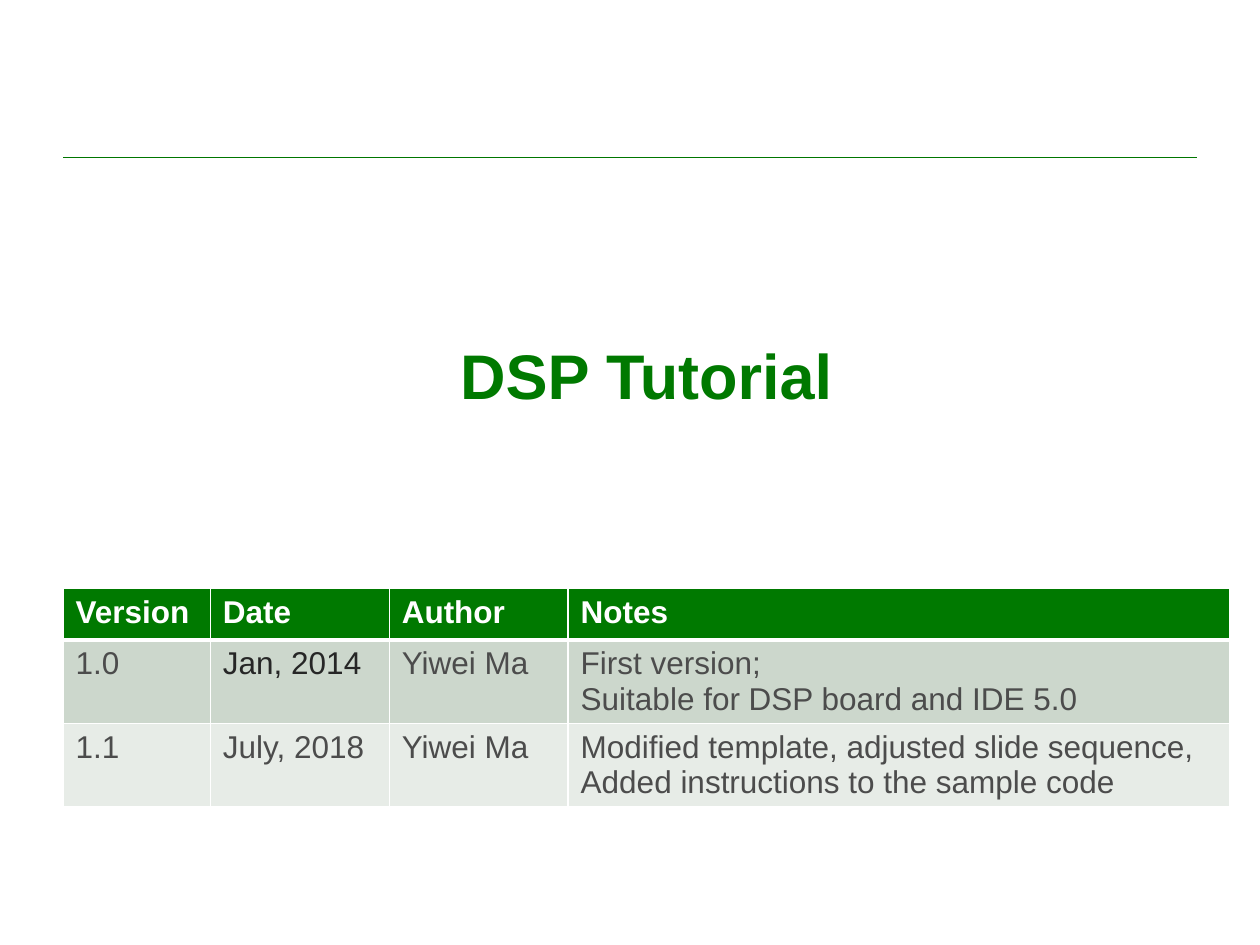
from typing import NamedTuple

from lxml.etree import SubElement
from pptx import Presentation
from pptx.dml.color import RGBColor
from pptx.enum.shapes import MSO_CONNECTOR as Link
from pptx.enum.text import MSO_ANCHOR as Anchor, PP_ALIGN as Align
from pptx.oxml.ns import qn
from pptx.util import Inches, Pt

GREEN, WHITE, GREY, DARK = "007900", "FFFFFF", "4C4C4C", "262626"
BANDS = ["CCD7CC", "E7ECE7"]
WIDTHS = [1.17, 1.42, 1.42, 5.25]
HEIGHT = 0.41


class Entry(NamedTuple):
    version: str
    date: str
    author: str
    notes: str


HEAD = Entry("Version", "Date", "Author", "Notes")
LOG = [
    Entry("1.0", "Jan, 2014", "Yiwei Ma",
          "First version;\vSuitable for DSP board and IDE 5.0"),
    Entry("1.1", "July, 2018", "Yiwei Ma",
          "Modified template, adjusted slide sequence,\n"
          "Added instructions to the sample code"),
]


def color(code: str) -> RGBColor:
    return RGBColor.from_string(code)


def style(frame, size: int, code: str, bold: bool) -> None:
    """Give every run in a text frame the same font."""
    form = {"name": "Arial", "size": Pt(size), "bold": bold}
    for para in frame.paragraphs:
        for run in para.runs:
            for key, value in form.items():
                setattr(run.font, key, value)
            run.font.color.rgb = color(code)


def edge(cell, base: float) -> None:
    """Draw white cell borders, with their own weight at the base."""
    props = cell._tc.get_or_add_tcPr()
    for place, (side, width) in enumerate(
            {"L": 1, "R": 1, "T": 1, "B": base}.items()):
        line = SubElement(props, qn(f"a:ln{side}"), w=str(Pt(width)))
        fill = SubElement(line, qn("a:solidFill"))
        SubElement(fill, qn("a:srgbClr"), val=WHITE)
        props.insert(place, line)  # borders come before the fill


def paint(cell, text: str, fill: str, ink: str, head: bool) -> None:
    cell.text_frame.text = text
    style(cell.text_frame, 18, ink, head)
    cell.fill.solid()
    cell.fill.fore_color.rgb = color(fill)
    edge(cell, 3 if head else 1)


def add_rule(slide) -> None:
    rule = slide.shapes.add_connector(
        Link.STRAIGHT, Inches(0.5), Inches(1.25), Inches(9.5), Inches(1.25))
    rule.line.color.rgb = color("007600")
    rule.line.width = Pt(0.75)
    SubElement(rule._element.spPr, qn("a:effectLst"))


def add_title(slide, text: str) -> None:
    title = slide.shapes.title
    box = {"left": 0.88, "top": 1.76, "width": 8.5, "height": 2.42}
    for key, value in box.items():
        setattr(title, key, Inches(value))
    frame = title.text_frame
    frame.text = text
    frame.vertical_anchor = Anchor.MIDDLE
    frame.paragraphs[0].alignment = Align.CENTER
    style(frame, 36, GREEN, True)


def add_log(slide) -> None:
    rows = [HEAD, *LOG]
    table = slide.shapes.add_table(
        len(rows), len(WIDTHS), Inches(0.5), Inches(4.67),
        Inches(sum(WIDTHS)), Inches(HEIGHT * len(rows))).table
    for col, width in zip(table.columns, WIDTHS):
        col.width = Inches(width)
    for r, entry in enumerate(rows):
        head = r == 0
        fill = GREEN if head else BANDS[(r - 1) % 2]
        for c, text in enumerate(entry):
            ink = WHITE if head else GREY
            if text == "Jan, 2014":
                ink = DARK
            paint(table.cell(r, c), text, fill, ink, head)


def main() -> None:
    deck = Presentation()
    deck.slide_width, deck.slide_height = Inches(10), Inches(7.5)
    slide = deck.slides.add_slide(deck.slide_layouts[0])
    # The subtitle is not used
    sub = slide.placeholders[1]._element
    sub.getparent().remove(sub)

    add_rule(slide)
    add_title(slide, "DSP Tutorial")
    add_log(slide)
    deck.save("out.pptx")


if __name__ == "__main__":
    main()
